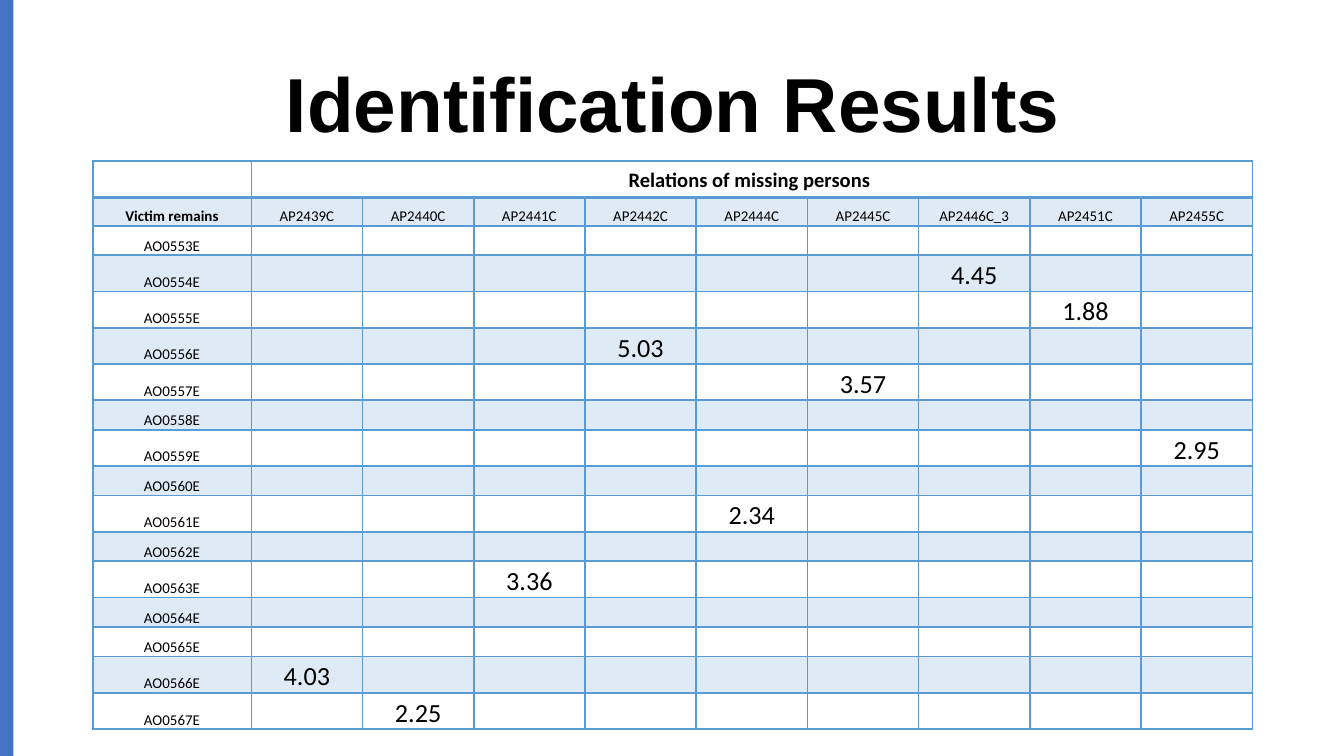
from lxml import etree
from pptx import Presentation
from pptx.dml.color import RGBColor
from pptx.enum.shapes import MSO_SHAPE
from pptx.enum.text import MSO_ANCHOR, PP_ALIGN
from pptx.oxml.ns import qn
from pptx.util import Inches, Pt

RECT = MSO_SHAPE.RECTANGLE
MIDDLE, BOTTOM = MSO_ANCHOR.MIDDLE, MSO_ANCHOR.BOTTOM
CENTER = PP_ALIGN.CENTER

BLACK = RGBColor(0x00, 0x00, 0x00)
BAR_BLUE = RGBColor(0x44, 0x72, 0xC4)
TABLE_BLUE = RGBColor(0x5B, 0x9B, 0xD5)

PERSONS = ["AP2439C", "AP2440C", "AP2441C", "AP2442C", "AP2444C",
           "AP2445C", "AP2446C_3", "AP2451C", "AP2455C"]
REMAINS = [f"AO{number:04}E" for number in range(553, 568)]
SCORES = {
    "AO0554E": ("AP2446C_3", "4.45"),
    "AO0555E": ("AP2451C", "1.88"),
    "AO0556E": ("AP2442C", "5.03"),
    "AO0557E": ("AP2445C", "3.57"),
    "AO0559E": ("AP2455C", "2.95"),
    "AO0561E": ("AP2444C", "2.34"),
    "AO0563E": ("AP2441C", "3.36"),
    "AO0566E": ("AP2439C", "4.03"),
    "AO0567E": ("AP2440C", "2.25"),
}
SLIDE_WIDTH = 10
SLIDE_HEIGHT = SLIDE_WIDTH * 9 / 16
LABEL_WIDTH = 1.18
SCORE_ROW, PLAIN_ROW, NAME_ROW = 0.27, 0.22, 0.21


def style_run(r, size, font, bold=False):
    """Set the font of a run."""
    r.font.size = Pt(size)
    r.font.name = font
    r.font.bold = bold
    r.font.color.rgb = BLACK


def add_title(s, left, top, width, height):
    """Add the centred slide title."""
    tf = s.shapes.add_textbox(Inches(left), Inches(top), Inches(width), Inches(height)).text_frame
    tf.word_wrap = True
    tf.vertical_anchor = MIDDLE
    tf.text = "Identification Results"
    p = tf.paragraphs[0]
    p.alignment = CENTER
    p.line_spacing = 0.9
    style_run(p.runs[0], 41, "Arial", True)


def add_side_bar(s, left, top, width, height):
    """Add the coloured bar along the slide edge."""
    sp = s.shapes.add_shape(RECT, Inches(left), Inches(top), Inches(width), Inches(height))
    sp.shadow.inherit = False
    sp.fill.solid()
    sp.fill.fore_color.rgb = BAR_BLUE
    sp.line.fill.background()


def set_borders(cell, top=1, bottom=1):
    """Draw the four cell borders, with top and bottom widths in points."""
    tcPr = cell._tc.get_or_add_tcPr()
    for side, width in (("L", 1), ("R", 1), ("T", top), ("B", bottom)):
        ln = etree.SubElement(tcPr, qn(f"a:ln{side}"), w=str(Pt(width)))
        fill = etree.SubElement(ln, qn("a:solidFill"))
        etree.SubElement(fill, qn("a:srgbClr"), val=str(TABLE_BLUE))


def set_fill(cell, banded):
    """Give a banded cell a translucent fill and any other cell none."""
    if not banded:
        cell.fill.background()
        return
    cell.fill.solid()
    cell.fill.fore_color.rgb = TABLE_BLUE
    color = cell._tc.tcPr.find(f"{qn('a:solidFill')}/{qn('a:srgbClr')}")
    etree.SubElement(color, qn("a:alpha"), val="20000")


def set_text(cell, text, size=8, bold=False, anchor=BOTTOM):
    """Write centred text, or keep an empty cell at the given text size."""
    cell.margin_left = cell.margin_right = cell.margin_top = Inches(0.01)
    cell.margin_bottom = 0
    cell.vertical_anchor = anchor
    p = cell.text_frame.paragraphs[0]
    p.alignment = CENTER
    if text:
        p.text = text
        style_run(p.runs[0], size, "Calibri", bold)
    else:
        etree.SubElement(p._p, qn("a:endParaRPr"), sz=str(size * 100))


def add_results_table(s, left, top, width):
    """Add the table that matches remains with relations of missing persons."""
    heights = [SCORE_ROW, NAME_ROW]
    heights += [SCORE_ROW if name in SCORES else PLAIN_ROW for name in REMAINS]
    table = s.shapes.add_table(len(heights), len(PERSONS) + 1, Inches(left), Inches(top),
                               Inches(width), Inches(sum(heights))).table
    for row, height in zip(table.rows, heights):
        row.height = Inches(height)
    table.columns[0].width = Inches(LABEL_WIDTH)
    for col in range(1, len(PERSONS) + 1):
        table.columns[col].width = Inches((width - LABEL_WIDTH) / len(PERSONS))

    for i, row in enumerate(table.rows):
        for cell in row.cells:
            set_borders(cell, top=2 if i == 1 else 1, bottom=2 if i == 0 else 1)
            set_fill(cell, i % 2 == 1)

    table.cell(0, 1).merge(table.cell(0, len(PERSONS)))
    set_text(table.cell(0, 0), "")
    set_text(table.cell(0, 1), "Relations of missing persons ", 11, True, MIDDLE)
    set_text(table.cell(1, 0), "Victim remains", bold=True)
    for col, person in enumerate(PERSONS, 1):
        set_text(table.cell(1, col), person)
    for i, name in enumerate(REMAINS, 2):
        set_text(table.cell(i, 0), name)
        match, score = SCORES.get(name, ("", ""))
        for col, person in enumerate(PERSONS, 1):
            if person == match:
                set_text(table.cell(i, col), score, 14)
            else:
                set_text(table.cell(i, col), "")


def main():
    """Build and save the slide."""
    prs = Presentation()
    prs.slide_width, prs.slide_height = Inches(SLIDE_WIDTH), Inches(SLIDE_HEIGHT)
    s = prs.slides.add_slide(prs.slide_layouts[6])
    add_title(s, 0.33, 0.26, 9.36, 1.09)
    add_side_bar(s, 0, 0, 0.1, SLIDE_HEIGHT)
    add_results_table(s, 0.69, 1.2, 8.63)
    prs.save("out.pptx")


if __name__ == "__main__":
    main()
